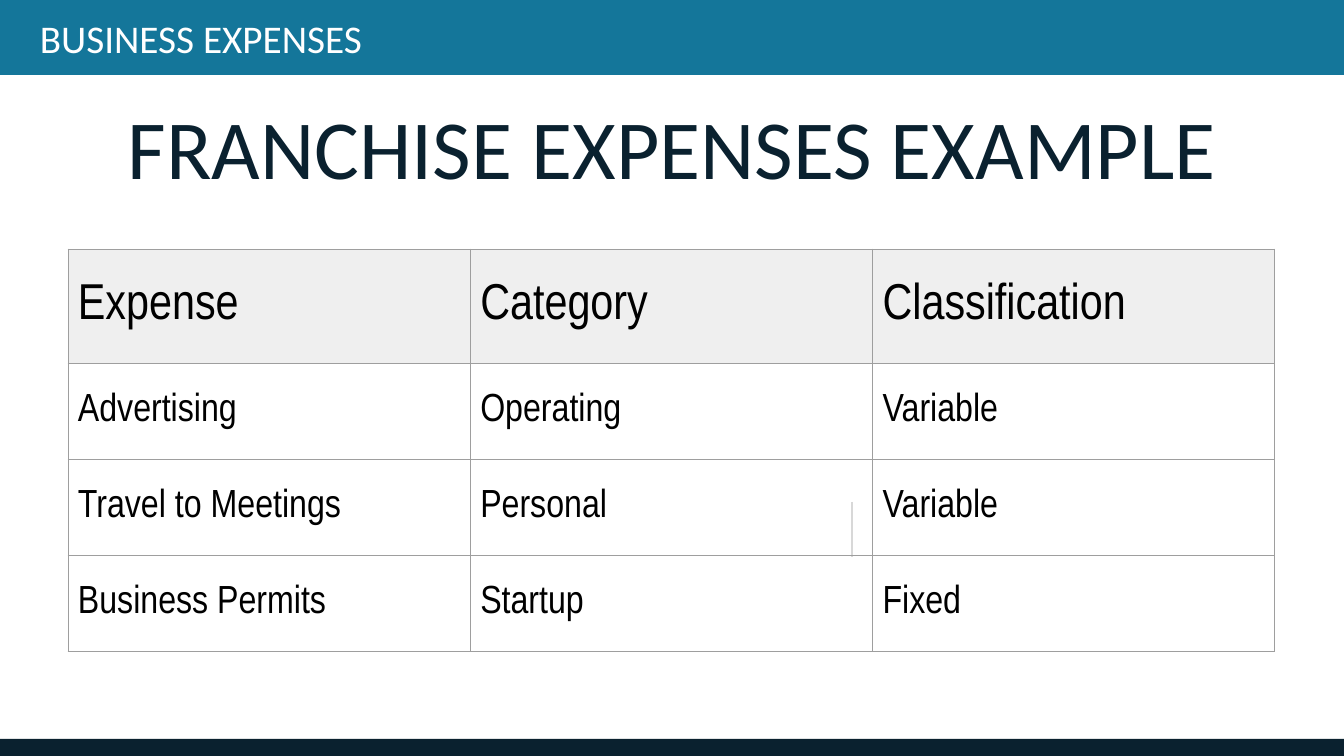
from dataclasses import dataclass

from lxml.etree import SubElement
from pptx import Presentation
from pptx.dml.color import RGBColor
from pptx.enum.shapes import MSO_CONNECTOR, MSO_SHAPE
from pptx.enum.text import MSO_ANCHOR, PP_ALIGN
from pptx.oxml.ns import qn
from pptx.util import Emu, Pt

EMU_PER_PX = 914400 / 100.8
COLORS = {
    "teal": "14769A", "navy": "0A212F", "white": "FFFFFF", "black": "000000",
    "header": "EFEFEF", "border": "9E9E9E", "tick": "D8D8D8",
}
SLIDE_WIDTH, SLIDE_HEIGHT = 1344, 756
BORDER_WIDTH = Pt(0.75)
CELL_MARGIN = 10


@dataclass
class Band:
    top: int
    height: int
    color: str


@dataclass
class Label:
    text: str
    box: tuple[int, int, int, int]
    size: int
    color: str
    alignment: PP_ALIGN


BANDS = [Band(0, 75, "teal"), Band(739, 17, "navy")]
LABELS = [
    Label("BUSINESS EXPENSES", (30, 9, 345, 57), 28, "white", PP_ALIGN.LEFT),
    Label("FRANCHISE EXPENSES EXAMPLE", (0, 91, SLIDE_WIDTH, 118), 60, "navy",
          PP_ALIGN.CENTER),
]
EXPENSES = [
    ("Expense", "Category", "Classification"),
    ("Advertising", "Operating", "Variable"),
    ("Travel to Meetings", "Personal", "Variable"),
    ("Business Permits", "Startup", "Fixed"),
]
TABLE_BOX = (68, 249, 1207, 403)
HEADER_HEIGHT = 115


def px(value: float) -> Emu:
    return Emu(round(value * EMU_PER_PX))


def rgb(name: str) -> RGBColor:
    return RGBColor.from_string(COLORS[name])


def style_text(paragraph, font_name: str, size: int, color: str) -> None:
    formats = {"name": font_name, "size": Pt(size), "bold": False}
    for run in paragraph.runs:
        for attribute, value in formats.items():
            setattr(run.font, attribute, value)
        run.font.color.rgb = rgb(color)


def add_band(slide, band: Band) -> None:
    shape = slide.shapes.add_shape(
        MSO_SHAPE.RECTANGLE, 0, px(band.top), px(SLIDE_WIDTH), px(band.height))
    shape.shadow.inherit = False
    shape.fill.solid()
    shape.fill.fore_color.rgb = rgb(band.color)
    shape.line.fill.background()


def add_label(slide, label: Label) -> None:
    shape = slide.shapes.add_textbox(*map(px, label.box))
    shape.text_frame.word_wrap = True
    paragraph = shape.text_frame.paragraphs[0]
    paragraph.text = label.text
    paragraph.alignment = label.alignment
    style_text(paragraph, "Calibri", label.size, label.color)


def add_tick(slide) -> None:
    connector = slide.shapes.add_connector(
        MSO_CONNECTOR.STRAIGHT, px(852), px(502), px(852), px(557))
    connector.line.color.rgb = rgb("tick")
    connector.line.width = BORDER_WIDTH
    SubElement(connector.element.spPr, qn("a:effectLst"))


def add_borders(cell) -> None:
    properties = cell._tc.get_or_add_tcPr()
    for position, side in enumerate(("lnL", "lnR", "lnT", "lnB")):
        line = properties.makeelement(qn(f"a:{side}"), {"w": str(BORDER_WIDTH)})
        fill = SubElement(line, qn("a:solidFill"))
        SubElement(fill, qn("a:srgbClr"), val=COLORS["border"])
        properties.insert(position, line)


def style_cell(cell, text: str, is_header: bool) -> None:
    formats = {"vertical_anchor": MSO_ANCHOR.MIDDLE, "text": text}
    for side in ("left", "right", "top", "bottom"):
        formats[f"margin_{side}"] = px(CELL_MARGIN)
    for attribute, value in formats.items():
        setattr(cell, attribute, value)
    if is_header:
        cell.fill.solid()
        cell.fill.fore_color.rgb = rgb("header")
    else:
        cell.fill.background()
    paragraph = cell.text_frame.paragraphs[0]
    paragraph.line_spacing = 0.9
    style_text(paragraph, "Arial Narrow", 36 if is_header else 28, "black")
    add_borders(cell)


def add_expense_table(slide) -> None:
    row_count, column_count = len(EXPENSES), len(EXPENSES[0])
    _, _, width, height = TABLE_BOX
    table = slide.shapes.add_table(
        row_count, column_count, *map(px, TABLE_BOX)).table
    table.horz_banding = False
    for column in table.columns:
        column.width = px(width / column_count)
    body_height = (height - HEADER_HEIGHT) / (row_count - 1)
    for row_index, values in enumerate(EXPENSES):
        is_header = row_index == 0
        table.rows[row_index].height = px(HEADER_HEIGHT if is_header else body_height)
        for column_index, text in enumerate(values):
            style_cell(table.cell(row_index, column_index), text, is_header)


def main() -> None:
    presentation = Presentation()
    presentation.slide_width = px(SLIDE_WIDTH)
    presentation.slide_height = px(SLIDE_HEIGHT)
    slide = presentation.slides.add_slide(presentation.slide_layouts[6])

    # Top and bottom bands with the headings
    for band in BANDS:
        add_band(slide, band)
    for label in LABELS:
        add_label(slide, label)

    # Short rule behind the expense table
    add_tick(slide)
    add_expense_table(slide)
    presentation.save("out.pptx")


if __name__ == "__main__":
    main()
